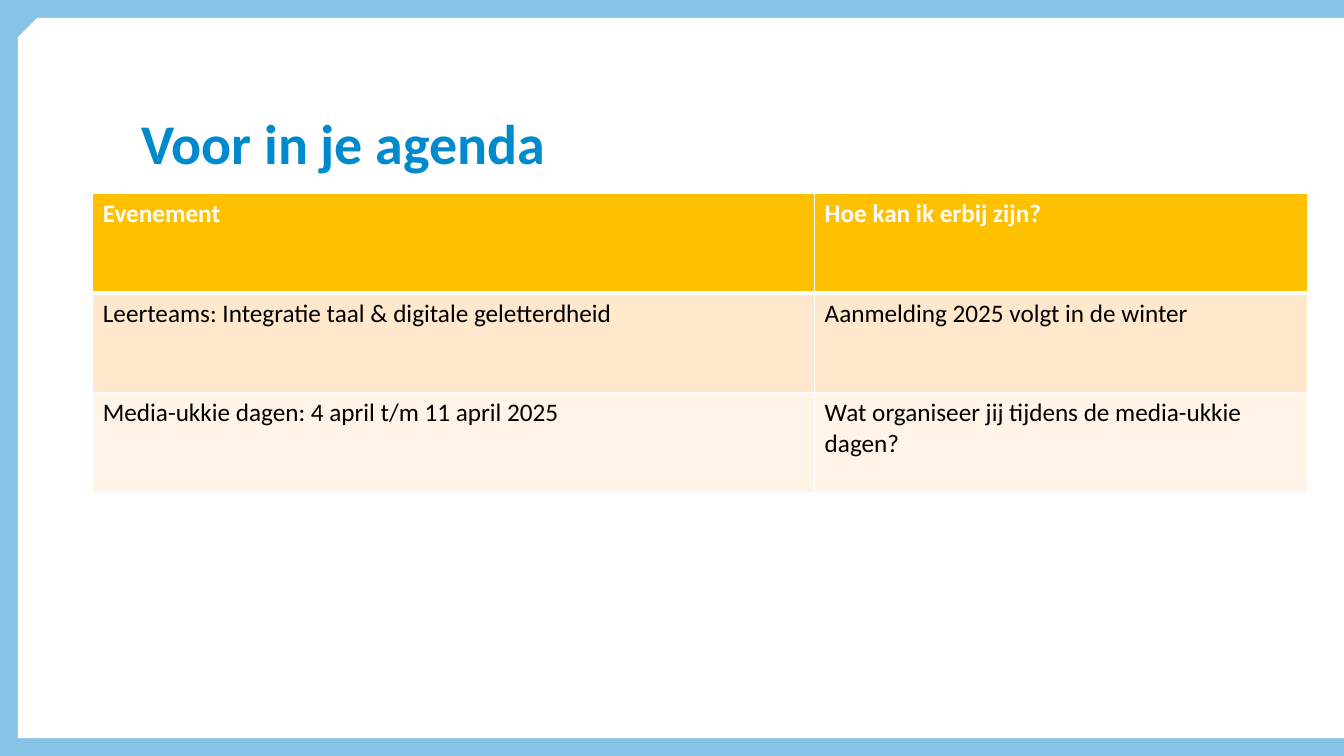
"""Build the agenda slide with its table of events."""
from dataclasses import dataclass
from typing import Any

from lxml.etree import SubElement
from pptx import Presentation
from pptx.dml.color import RGBColor
from pptx.enum.text import MSO_ANCHOR as Anchor, MSO_AUTO_SIZE as AutoSize, PP_ALIGN as Align
from pptx.oxml.ns import qn
from pptx.util import Cm, Pt

WIDTH, HEIGHT = 33.87, 19.05
MARGIN, CUT = 0.45, 0.49
COLUMN_WIDTHS = (18.19, 12.42)
ROW_HEIGHT = 2.51


@dataclass(frozen=True)
class EventRow:
    texts: tuple[str, str]
    fill: str
    color: str = "000000"
    bold: bool = False
    top: float = 1
    bottom: float = 1


ROWS = (
    EventRow(("Evenement", "Hoe kan ik erbij zijn?"), "FFC000", "FFFFFF", True, bottom=3),
    EventRow(("Leerteams: Integratie taal & digitale geletterdheid",
              "Aanmelding 2025 volgt in de winter"), "FFE8CC", top=3),
    EventRow(("Media-ukkie dagen: 4 april t/m 11 april 2025",
              "Wat organiseer jij tijdens de media-ukkie dagen?"), "FFF4E7"),
)


def paint(fill: Any, color: str) -> None:
    fill.solid()
    fill.fore_color.rgb = RGBColor.from_string(color)


def apply(target: Any, values: dict[str, Any]) -> None:
    for name, value in values.items():
        setattr(target, name, value)


def write(frame: Any, text: str, size: float, color: str, bold: bool) -> Any:
    para = frame.paragraphs[0]
    span = para.add_run()
    span.text = text
    apply(span.font, {"name": "Calibri", "size": Pt(size), "bold": bold})
    paint(span.font.fill, color)
    return para


def add_title(page: Any, text: str) -> None:
    title = page.shapes.title
    apply(title, {"left": Cm(3.56), "top": Cm(2.82), "width": Cm(25.91), "height": Cm(1.83)})
    frame = title.text_frame
    apply(frame, {"margin_left": 0, "margin_top": 0, "margin_right": 0, "margin_bottom": 0,
                  "vertical_anchor": Anchor.MIDDLE, "auto_size": AutoSize.NONE,
                  "word_wrap": True})
    para = write(frame, text, 40, "008ACE", True)
    apply(para, {"alignment": Align.LEFT, "line_spacing": 0.8})


def add_panel(page: Any) -> None:
    bottom = HEIGHT - MARGIN
    corners = ((WIDTH, MARGIN), (WIDTH, bottom), (MARGIN, bottom), (MARGIN, MARGIN + CUT))
    builder = page.shapes.build_freeform(Cm(MARGIN + CUT), Cm(MARGIN))
    builder.add_line_segments([(Cm(x), Cm(y)) for x, y in corners], close=True)
    panel = builder.convert_to_shape()
    panel.shadow.inherit = False
    paint(panel.fill, "FFFFFF")
    panel.line.fill.background()
    page.shapes.title.element.addprevious(panel.element)


def add_borders(cell: Any, row: EventRow) -> None:
    properties = cell.fill._xPr
    widths = {"a:lnL": 1, "a:lnR": 1, "a:lnT": row.top, "a:lnB": row.bottom}
    for tag, width in widths.items():
        line = SubElement(properties, qn(tag), w=str(Pt(width)))
        SubElement(SubElement(line, qn("a:solidFill")), qn("a:srgbClr"), val="FFFFFF")


def add_events(page: Any) -> None:
    table = page.shapes.add_table(
        len(ROWS), len(COLUMN_WIDTHS), Cm(2.34), Cm(4.88),
        Cm(sum(COLUMN_WIDTHS)), Cm(ROW_HEIGHT * len(ROWS))).table
    for column, width in zip(table.columns, COLUMN_WIDTHS):
        column.width = Cm(width)
    for index, row in enumerate(ROWS):
        table.rows[index].height = Cm(ROW_HEIGHT)
        for cell, text in zip(table.rows[index].cells, row.texts):
            write(cell.text_frame, text, 18, row.color, row.bold)
            add_borders(cell, row)
            paint(cell.fill, row.fill)


def main() -> None:
    deck = Presentation()
    apply(deck, {"slide_width": Cm(WIDTH), "slide_height": Cm(HEIGHT)})
    page = deck.slides.add_slide(deck.slide_layouts[5])
    paint(page.background.fill, "87C3E7")
    add_title(page, "Voor in je agenda")
    add_panel(page)
    add_events(page)
    deck.save("out.pptx")


if __name__ == "__main__":
    main()
